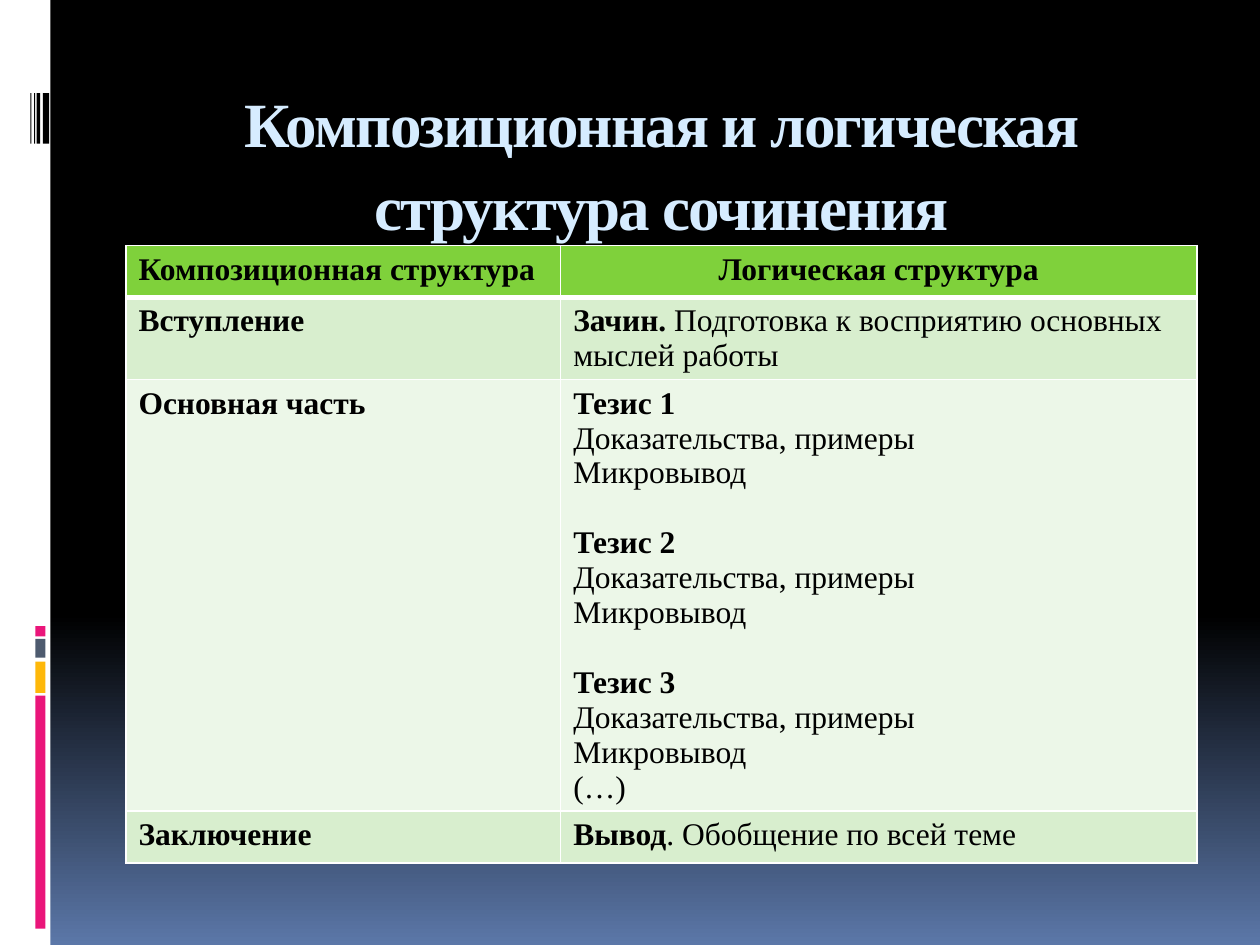
import pptx
import pptx.dml.color
import pptx.enum.shapes
import pptx.enum.text
import pptx.oxml
import pptx.oxml.ns
import pptx.util
from pptx.util import Inches, Pt

FONT = "Times New Roman"
TITLE = "Композиционная и логическая структура сочинения"

# Each cell is a list of paragraphs, each paragraph a list of (text, bold) runs.
EVIDENCE = [[("Доказательства, примеры", False)], [("Микровывод", False)]]
THESES = [
    paragraph
    for number in (1, 2, 3)
    for paragraph in [[(f"Тезис {number}", True)], *EVIDENCE]
]
ROWS = [
    ([[("Композиционная структура", True)]], [[("Логическая структура", True)]]),
    (
        [[("Вступление", True)]],
        [[("Зачин. ", True), ("Подготовка к восприятию основных мыслей работы", False)]],
    ),
    ([[("Основная часть", True)]], THESES + [[("(…)", False)]]),
    ([[("Заключение", True)]], [[("Вывод", True), (". Обобщение по всей теме", False)]]),
]
ROW_HEIGHTS = [0.41, 0.65, 3.42, 0.41]
ROW_FILLS = ["7FD13B", "D8EECE", "ECF7E8", "D8EECE"]
COLUMN_WIDTHS = [3.45, 5.05]

# left, top, width, height, colour
SIDE_BARS = [
    (0, 0, 0.4, 7.5, "FFFFFF"),
    (0.28, 5.52, 0.08, 1.85, "EA157A"),
    (0.28, 5.25, 0.08, 0.25, "FEB80A"),
    (0.28, 5.07, 0.08, 0.15, "4E5B6F"),
    (0.28, 4.97, 0.08, 0.08, "EA157A"),
]
BARCODE = [(left, 0.74, width, 0.4, "000000")
           for left, width in [(0.34, 0.05), (0.29, 0.03), (0.27, 0.01), (0.24, 0.01)]]


def rgb(colour):
    return pptx.dml.color.RGBColor.from_string(colour)


def add_run(paragraph, text, size, colour, bold):
    run = paragraph.add_run()
    run.text = text
    run.font.name = FONT
    run.font.size = Pt(size)
    run.font.bold = bold
    run.font.color.rgb = rgb(colour)
    return run


def add_bar(slide, left, top, width, height, colour):
    bar = slide.shapes.add_shape(
        pptx.enum.shapes.MSO_SHAPE.RECTANGLE,
        Inches(left), Inches(top), Inches(width), Inches(height))
    bar.shadow.inherit = False
    bar.fill.solid()
    bar.fill.fore_color.rgb = rgb(colour)
    bar.line.fill.background()


def set_borders(cell, widths):
    """Draw white borders; widths maps the sides L, R, T, B to points."""
    properties = cell._tc.get_or_add_tcPr()
    for side, width in widths.items():
        properties.append(pptx.oxml.parse_xml(
            f'<a:ln{side} {pptx.oxml.ns.nsdecls("a")} w="{Pt(width)}">'
            f'<a:solidFill><a:srgbClr val="FFFFFF"/></a:solidFill></a:ln{side}>'))


def paint_background(slide):
    fill = slide.background.fill
    fill.gradient()
    fill.gradient_angle = 270
    for stop, position, colour in zip(fill.gradient_stops, (0.65, 1), ("000000", "5B77A8")):
        stop.position = position
        stop.color.rgb = rgb(colour)


def fill_title(title):
    title.left, title.top, title.width, title.height = map(Inches, (1, 0.56, 8.5, 1))
    frame = title.text_frame
    frame.word_wrap = True
    frame.auto_size = pptx.enum.text.MSO_AUTO_SIZE.NONE
    frame.vertical_anchor = pptx.enum.text.MSO_ANCHOR.TOP
    paragraph = frame.paragraphs[0]
    paragraph.alignment = pptx.enum.text.PP_ALIGN.CENTER
    paragraph.line_spacing = 1.1
    run = add_run(paragraph, TITLE, 36, "D6ECFF", True)
    run.font._element.set("spc", "-100")


def fill_cell(cell, paragraphs):
    for index, runs in enumerate(paragraphs):
        frame = cell.text_frame
        paragraph = frame.paragraphs[0] if index == 0 else frame.add_paragraph()
        if index and runs[0][1]:
            paragraph.space_before = Pt(20)  # one line between theses
        for text, bold in runs:
            add_run(paragraph, text, 18, "000000", bold)


def add_structure_table(slide):
    table = slide.shapes.add_table(
        len(ROWS), len(COLUMN_WIDTHS), Inches(1), Inches(1.95),
        Inches(sum(COLUMN_WIDTHS)), Inches(sum(ROW_HEIGHTS))).table
    for column, width in zip(table.columns, COLUMN_WIDTHS):
        column.width = Inches(width)
    for row_index, (row, contents) in enumerate(zip(table.rows, ROWS)):
        row.height = Inches(ROW_HEIGHTS[row_index])
        for cell, paragraphs in zip(row.cells, contents):
            set_borders(cell, {"L": 1, "R": 1,
                               "T": 3 if row_index == 1 else 1,
                               "B": 3 if row_index == 0 else 1})
            cell.fill.solid()
            cell.fill.fore_color.rgb = rgb(ROW_FILLS[row_index])
            fill_cell(cell, paragraphs)
    header = table.cell(0, 1).text_frame.paragraphs[0]
    header.alignment = pptx.enum.text.PP_ALIGN.CENTER


def main():
    presentation = pptx.Presentation()
    presentation.slide_width, presentation.slide_height = Inches(10), Inches(7.5)
    slide = presentation.slides.add_slide(presentation.slide_layouts[5])
    paint_background(slide)
    for bar in SIDE_BARS + BARCODE:
        add_bar(slide, *bar)
    fill_title(slide.shapes.title)
    add_structure_table(slide)
    presentation.save("out.pptx")


if __name__ == "__main__":
    main()
